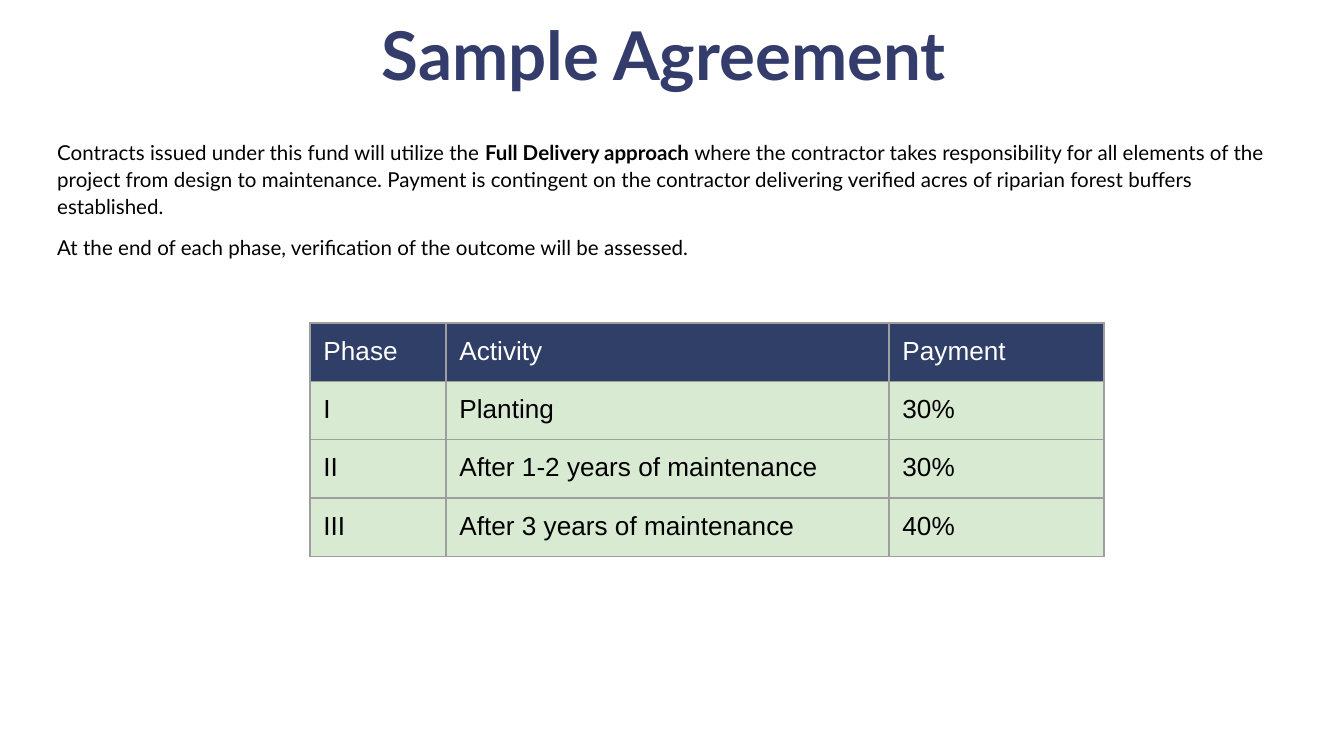
from lxml import etree
from pptx import Presentation, util as u
from pptx.dml.color import RGBColor
from pptx.enum import text
from pptx.oxml import ns

COLORS = {"title": "333C6B", "black": "000000", "white": "FFFFFF",
          "header": "303F67", "row": "D9EAD3", "border": "9E9E9E"}
TITLE = [[("Sample Agreement ", True)]]
BODY = [
    [("Contracts issued under this fund will utilize the ", False),
     ("Full Delivery approach", True),
     (" where the contractor takes responsibility for all elements of the project "
      "from design to maintenance. Payment is contingent on the contractor delivering "
      "verified acres of riparian forest buffers established.", False)],
    [("At the end of each phase, verification of the outcome will be assessed.", False)],
]
PHASES = [
    ("Phase", "Activity", "Payment"),
    ("I", "Planting", "30%"),
    ("II", "After 1-2 years of maintenance", "30%"),
    ("III", "After 3 years of maintenance", "40%"),
]
COLUMNS = (136, 443, 215)
ROW_HEIGHT = 58
MARGINS = {f"margin_{side}": u.Inches(0.1) for side in ("left", "top", "right", "bottom")}
SCALE = 914400 / 134.4


def px(n):
    return round(n * SCALE)


def assign(obj, values):
    for name, value in values.items():
        setattr(obj, name, value)


def add_run(p, words, font, size, color, bold=False):
    r = p.add_run()
    r.text = words
    assign(r.font, {"name": font, "size": u.Pt(size), "bold": bold})
    r.font.color.rgb = RGBColor.from_string(COLORS[color])


def add_text(s, box, paragraphs, size, color, formats):
    tf = s.shapes.add_textbox(*map(px, box)).text_frame
    assign(tf, {"word_wrap": True, **MARGINS})
    for i, runs in enumerate(paragraphs):
        p = tf.add_paragraph() if i else tf.paragraphs[0]
        assign(p, formats)
        if i:
            p.space_before = u.Pt(8)
        for words, bold in runs:
            add_run(p, words, "Lato", size, color, bold)
    return tf


def add_borders(cell):
    tc_pr = cell._tc.get_or_add_tcPr()
    for i, side in enumerate(("lnL", "lnR", "lnT", "lnB")):
        ln = etree.Element(ns.qn(f"a:{side}"), w=str(u.Pt(0.75)))
        fill = etree.SubElement(ln, ns.qn("a:solidFill"))
        etree.SubElement(fill, ns.qn("a:srgbClr"), val=COLORS["border"])
        tc_pr.insert(i, ln)


def add_phases(s, left, top):
    size = sum(COLUMNS), ROW_HEIGHT * len(PHASES)
    table = s.shapes.add_table(len(PHASES), len(COLUMNS),
                               *map(px, (left, top, *size))).table
    for column, width in zip(table.columns, COLUMNS):
        column.width = px(width)
    for i, row in enumerate(PHASES):
        table.rows[i].height = px(ROW_HEIGHT)
        fill, color = ("row", "black") if i else ("header", "white")
        for j, words in enumerate(row):
            cell = table.cell(i, j)
            assign(cell, MARGINS)
            cell.fill.solid()
            cell.fill.fore_color.rgb = RGBColor.from_string(COLORS[fill])
            add_run(cell.text_frame.paragraphs[0], words, "Arial", 14, color)
            add_borders(cell)


def main():
    prs = Presentation()
    assign(prs, {"slide_width": px(1344), "slide_height": px(756)})
    s = prs.slides.add_slide(prs.slide_layouts[6])
    add_text(s, (44, 125, 1257, 579), BODY, 11, "black", {"line_spacing": 1.08})
    tf = add_text(s, (0, 0, 1344, 109), TITLE, 36, "title",
                  {"alignment": text.PP_ALIGN.CENTER})
    tf.auto_size = text.MSO_AUTO_SIZE.SHAPE_TO_FIT_TEXT
    add_phases(s, 310, 323)
    prs.save("out.pptx")


if __name__ == "__main__":
    main()
